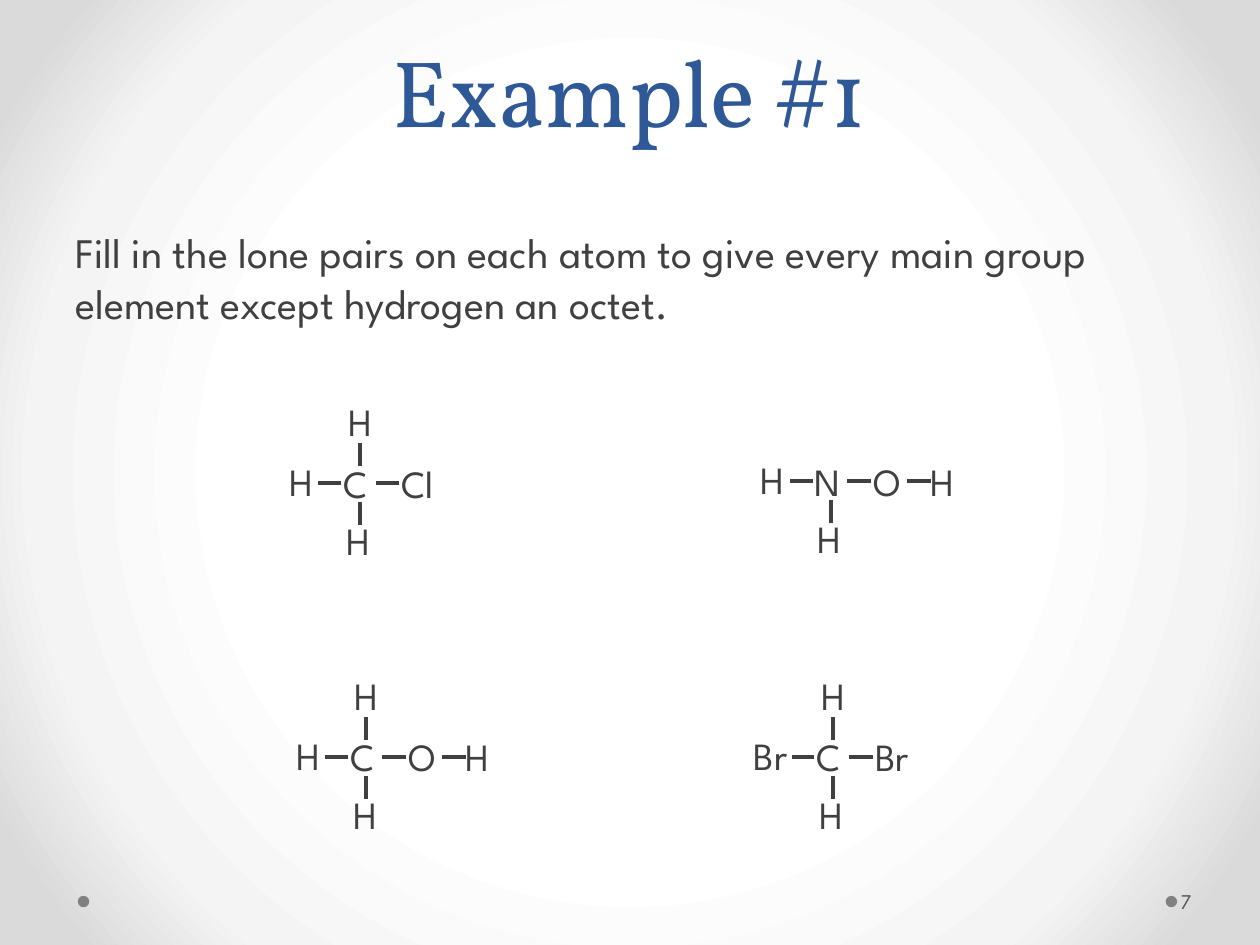
"""Build a chemistry exercise slide with four structural formulas."""
from dataclasses import dataclass
from typing import Any

import pptx
import pptx.dml.color
import pptx.enum.shapes
import pptx.enum.text
import pptx.oxml
import pptx.oxml.ns
import pptx.util
from pptx.util import Cm

ANCHOR = pptx.enum.text.MSO_ANCHOR
ALIGN = pptx.enum.text.PP_ALIGN
FIT = pptx.enum.text.MSO_AUTO_SIZE


@dataclass(frozen=True)
class Theme:
    title_font: str = "Vollkorn"
    body_font: str = "League Spartan"
    title_color: str = "2F5897"
    ink: str = "404040"
    number_color: str = "595959"
    dot_color: str = "808080"
    title_size: float = 54
    title_leading: float = 58
    body_size: float = 24
    atom_size: float = 22
    number_size: float = 12
    bond_width: float = 2.25
    backdrop: tuple = ((50, "FFFFFF"), (76, "F4F4F4"), (92, "DADADA"))


@dataclass(frozen=True)
class Bond:
    start: tuple[float, float]
    end: tuple[float, float]


@dataclass(frozen=True)
class Molecule:
    left: float
    top: float
    center: str
    neighbors: dict[str, str]


THEME = Theme()
ATOM_HEIGHT = 1.19
ATOM_WIDTHS = {"C": 1.14, "N": 1.14, "H": 1.04, "O": 1.19, "Cl": 1.3, "Br": 1.22}
ATOM_OFFSETS = {
    "left": (-0.05, -0.03),
    "right": (1.17, 0),
    "up": (0.09, -1.24),
    "down": (0.06, 1.16),
    "far": (2.33, 0),
}
BONDS = {
    "left": Bond((0.2, 0.6), (-0.26, 0.6)),
    "right": Bond((1.37, 0.6), (0.9, 0.6)),
    "up": Bond((0.57, 0.26), (0.57, -0.21)),
    "down": Bond((0.57, 1.45), (0.57, 0.98)),
    "far": Bond((2.11, 0.6), (2.59, 0.6)),
}
MOLECULES = (
    Molecule(6.68, 9.14, "C", {"left": "H", "right": "Cl", "up": "H", "down": "H"}),
    Molecule(16.18, 9.1, "N", {"left": "H", "right": "O", "down": "H", "far": "H"}),
    Molecule(6.81, 14.66, "C",
             {"left": "H", "right": "O", "up": "H", "down": "H", "far": "H"}),
    Molecule(16.22, 14.66, "C", {"left": "Br", "right": "Br", "up": "H", "down": "H"}),
)


def rgb(color: str) -> pptx.dml.color.RGBColor:
    """Turn a hex string into a colour."""
    return pptx.dml.color.RGBColor.from_string(color)


def write(box: Any, text: str, *, size: float, font: str = THEME.body_font,
          color: str = THEME.ink, align: Any = ALIGN.LEFT, anchor: Any = ANCHOR.TOP,
          wrap: bool = True, fit: Any = FIT.NONE, before: float = 0,
          leading: float | None = None) -> None:
    """Fill a box with one formatted paragraph."""
    frame = box.text_frame
    frame.word_wrap = wrap
    frame.auto_size = fit
    frame.vertical_anchor = anchor
    para = frame.paragraphs[0]
    para.alignment = align
    para.space_before = pptx.util.Pt(before)
    if leading:
        para.line_spacing = pptx.util.Pt(leading)
    span = para.add_run()
    span.text = text
    span.font.size = pptx.util.Pt(size)
    span.font.name = font
    span.font.color.rgb = rgb(color)


def paint_backdrop(page: Any) -> None:
    """Give the page a circular gradient."""
    page.background.fill.gradient()
    gradient = page.element.xpath(".//a:gradFill")[0]
    stops = "".join(
        f'<a:gs pos="{position * 1000}"><a:srgbClr val="{color}"/></a:gs>'
        for position, color in THEME.backdrop)
    gradient.getparent().replace(gradient, pptx.oxml.parse_xml(
        f'<a:gradFill {pptx.oxml.ns.nsdecls("a")} rotWithShape="1">'
        f'<a:gsLst>{stops}</a:gsLst><a:path path="circle">'
        '<a:fillToRect l="50000" t="50000" r="50000" b="50000"/>'
        '</a:path></a:gradFill>'))


def add_dot(page: Any, left: float) -> None:
    """Draw a footer dot."""
    dot = page.shapes.add_shape(pptx.enum.shapes.MSO_SHAPE.OVAL,
                                Cm(left), Cm(18.06), Cm(0.23), Cm(0.23))
    dot.shadow.inherit = False
    dot.fill.solid()
    dot.fill.fore_color.rgb = rgb(THEME.dot_color)
    dot.line.fill.background()


def add_atom(group: Any, symbol: str, left: float, top: float, wrap: bool = False) -> None:
    """Write one element symbol."""
    box = group.shapes.add_textbox(Cm(left), Cm(top), Cm(ATOM_WIDTHS[symbol]),
                                   Cm(ATOM_HEIGHT))
    write(box, symbol, size=THEME.atom_size, wrap=wrap, fit=FIT.SHAPE_TO_FIT_TEXT)


def add_bond(group: Any, bond: Bond, left: float, top: float) -> None:
    """Draw one single bond."""
    line = group.shapes.add_connector(
        pptx.enum.shapes.MSO_CONNECTOR.STRAIGHT,
        Cm(left + bond.start[0]), Cm(top + bond.start[1]),
        Cm(left + bond.end[0]), Cm(top + bond.end[1]))
    line.line.color.rgb = rgb(THEME.ink)
    line.line.width = pptx.util.Pt(THEME.bond_width)
    line.element.spPr.append(pptx.oxml.parse_xml(
        f'<a:effectLst {pptx.oxml.ns.nsdecls("a")}/>'))


def add_molecule(page: Any, molecule: Molecule) -> None:
    """Draw a grouped structural formula."""
    group = page.shapes.add_group_shape()
    add_atom(group, molecule.center, molecule.left, molecule.top, wrap=True)
    for side, symbol in molecule.neighbors.items():
        across, down = ATOM_OFFSETS[side]
        if side == "left":
            across -= ATOM_WIDTHS[symbol]
        add_bond(group, BONDS[side], molecule.left, molecule.top)
        add_atom(group, symbol, molecule.left + across, molecule.top + down)


def main() -> None:
    """Build and save the deck."""
    deck = pptx.Presentation()
    deck.slide_width, deck.slide_height = Cm(25.4), Cm(19.05)
    page = deck.slides.add_slide(deck.slide_layouts.get_by_name("Title Only"))
    paint_backdrop(page)
    for left in (23.5, 1.57):
        add_dot(page, left)

    title = page.shapes.title
    title.left, title.top, title.width, title.height = Cm(1.27), Cm(0), Cm(22.86), Cm(3.07)
    write(title, "Example #1", size=THEME.title_size, font=THEME.title_font,
          color=THEME.title_color, align=ALIGN.CENTER, anchor=ANCHOR.BOTTOM,
          leading=THEME.title_leading)

    task = page.shapes.add_textbox(Cm(1.27), Cm(4.45), Cm(22.86), Cm(12.57))
    write(task, "Fill in the lone pairs on each atom to give every main group "
          "element except hydrogen an octet.", size=THEME.body_size, before=4.8)

    for molecule in MOLECULES:
        add_molecule(page, molecule)

    number = page.shapes.add_textbox(Cm(23.72), Cm(17.65), Cm(1.55), Cm(1.02))
    number.text_frame.margin_left = Cm(0.08)
    number.text_frame.margin_right = Cm(0.13)
    write(number, "7", size=THEME.number_size, color=THEME.number_color,
          anchor=ANCHOR.MIDDLE)
    deck.save("out.pptx")


if __name__ == "__main__":
    main()
